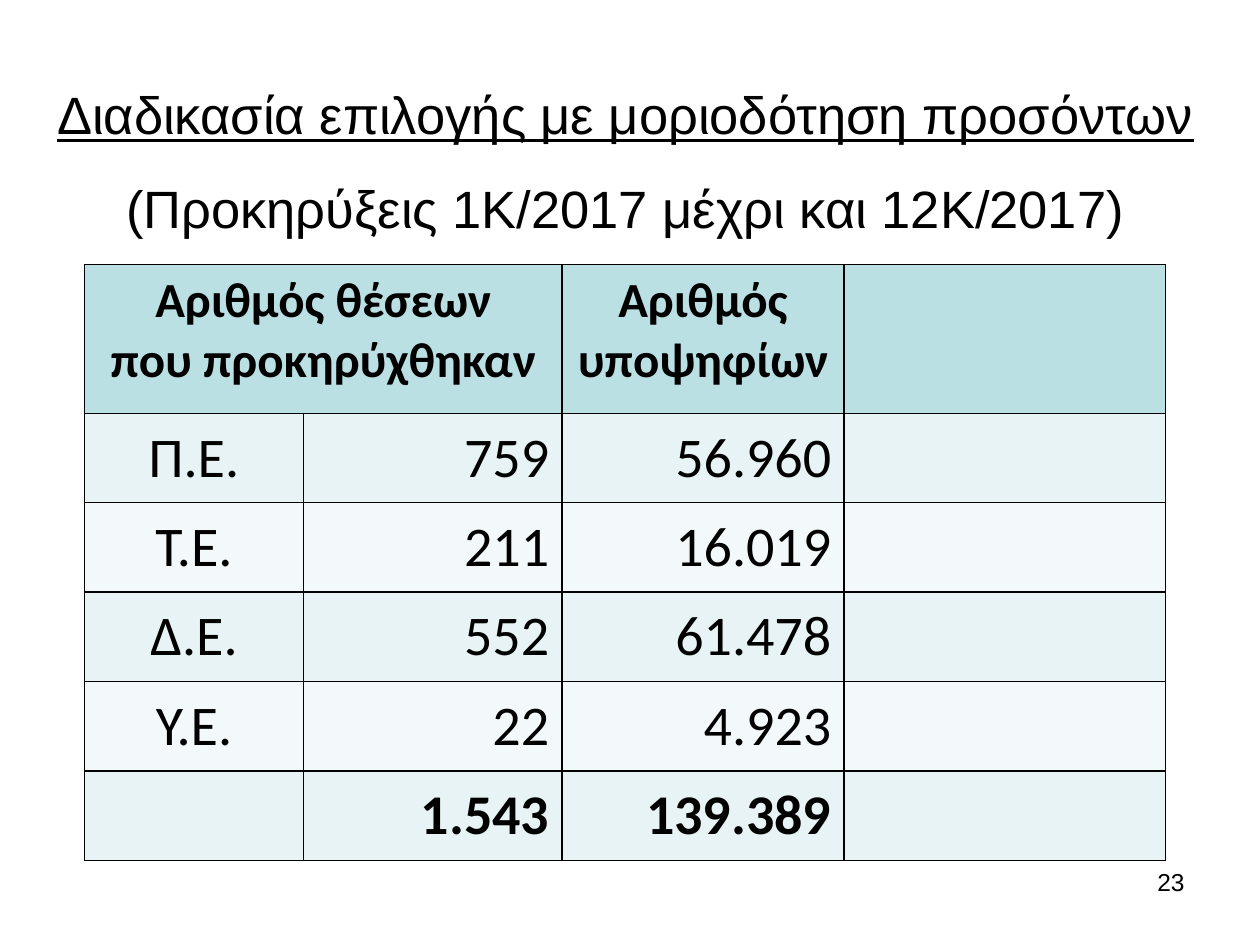
"""Build a slide with a table of advertised posts and candidates."""
from lxml import etree
from pptx import Presentation
from pptx import util as u
from pptx.dml.color import RGBColor
from pptx.enum import text
from pptx.oxml import ns

COLORS = {"ink": "000000", "header": "BBE0E3", "odd": "E7F3F4", "even": "F3F9FA"}
ALIGN = {"center": text.PP_ALIGN.CENTER, "right": text.PP_ALIGN.RIGHT}
WIDTH, HEIGHT = u.Inches(10), u.Inches(7.5)


def write(para, words, align, **format_values):
    para.alignment = ALIGN[align]
    span = para.add_run()
    span.text = words
    for name, value in format_values.items():
        setattr(span.font, name, value)
    span.font.color.rgb = RGBColor.from_string(COLORS["ink"])


def paint(cell, color):
    cell.fill.solid()
    cell.fill.fore_color.rgb = RGBColor.from_string(COLORS[color])
    properties = cell._tc.get_or_add_tcPr()
    for position, side in enumerate(("a:lnL", "a:lnR", "a:lnT", "a:lnB")):
        line = etree.Element(ns.qn(side), w=str(u.Pt(1)))
        solid = etree.SubElement(line, ns.qn("a:solidFill"))
        etree.SubElement(solid, ns.qn("a:srgbClr"), val=COLORS["ink"])
        properties.insert(position, line)


deck = Presentation()
deck.slide_width, deck.slide_height = WIDTH, HEIGHT
page = deck.slides.add_slide(deck.slide_layouts[6])

title = page.shapes.add_textbox(
    u.Inches(0.28), u.Inches(0.44), u.Inches(9.37), u.Inches(1.42)
).text_frame
title.word_wrap = True
title.vertical_anchor = text.MSO_ANCHOR.MIDDLE
heading = title.paragraphs[0]
heading.line_spacing, heading.space_after = 1.5, u.Pt(12)
title_font = {"name": "Arial", "size": u.Pt(30)}
write(heading, "Διαδικασία επιλογής με μοριοδότηση προσόντων", "center",
      underline=True, **title_font)
heading.add_line_break()
write(heading, "(Προκηρύξεις 1Κ/2017 μέχρι και 12Κ/2017)", "center",
      underline=False, **title_font)

column_widths = [1.74, 2.05, 2.24, 2.55]
row_heights = [1.18] + [0.71] * 5
rows = [
    ["Αριθμός θέσεων\nπου προκηρύχθηκαν", "", "Αριθμός\nυποψηφίων", ""],
    ["Π.Ε.", "759", "56.960", ""],
    ["Τ.Ε.", "211", "16.019", ""],
    ["Δ.Ε.", "552", "61.478", ""],
    ["Υ.Ε.", "22", "4.923", ""],
    ["", "1.543", "139.389", ""],
]
table = page.shapes.add_table(
    len(rows), len(column_widths), u.Inches(0.67), u.Inches(2.1),
    u.Inches(sum(column_widths)), u.Inches(sum(row_heights))
).table
for column, width in zip(table.columns, column_widths):
    column.width = u.Inches(width)
for row, height in zip(table.rows, row_heights):
    row.height = u.Inches(height)

for r, values in enumerate(rows):
    is_header, is_total = r == 0, r == len(rows) - 1
    for c, value in enumerate(values):
        cell = table.cell(r, c)
        paint(cell, "header" if is_header else "odd" if r % 2 else "even")
        if not value:
            continue
        cell.vertical_anchor = text.MSO_ANCHOR.TOP if is_header else text.MSO_ANCHOR.MIDDLE
        for i, words in enumerate(value.split("\n")):
            para = cell.text_frame.add_paragraph() if i else cell.text_frame.paragraphs[0]
            write(para, words, "center" if is_header or c == 0 else "right",
                  name="Calibri", size=u.Pt(28 if is_header else 32),
                  bold=is_header or is_total)
table.cell(0, 0).merge(table.cell(0, 1))

number = page.shapes.add_textbox(
    u.Inches(7.17), u.Inches(6.83), u.Inches(2.33), u.Inches(0.52)
).text_frame
number.word_wrap = True
write(number.paragraphs[0], "23", "right", name="Arial", size=u.Pt(14))

deck.save("out.pptx")
